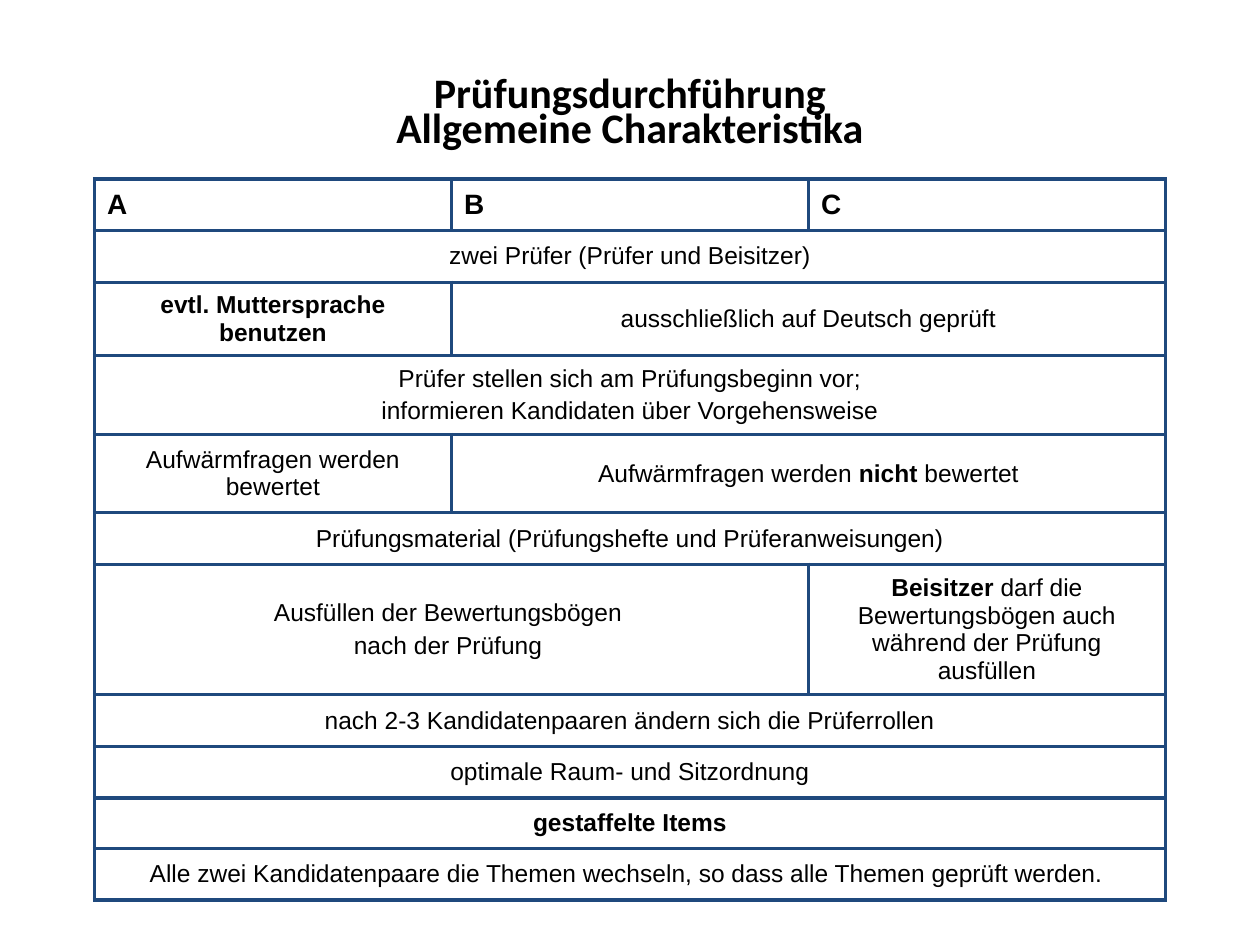
from dataclasses import dataclass

import pptx
import pptx.dml.color
import pptx.enum.text
import pptx.oxml
import pptx.oxml.ns
import pptx.util

EMU_PER_PX = 9144  # 100 px to the inch
ALIGN = pptx.enum.text.PP_ALIGN
MIDDLE = pptx.enum.text.MSO_ANCHOR.MIDDLE


@dataclass(frozen=True)
class Theme:
    text: str = "000000"
    border: str = "1F497D"
    title_font: str = "Calibri"
    body_font: str = "Arial"
    title_size: int = 24
    header_size: int = 16
    body_size: int = 14
    border_width: float = 2.25


@dataclass(frozen=True)
class Span:
    text: str
    bold: bool = False


@dataclass(frozen=True)
class Cell:
    """One cell: paragraphs of spans, reaching over one or more columns."""
    paragraphs: tuple[tuple[Span, ...], ...]
    columns: int = 1
    header: bool = False


@dataclass(frozen=True)
class Row:
    height: int
    cells: tuple[Cell, ...]


THEME = Theme()


def px(length: int) -> pptx.util.Emu:
    return pptx.util.Emu(length * EMU_PER_PX)


def plain(*lines: str, columns: int = 1, bold: bool = False, header: bool = False) -> Cell:
    """Describe a cell whose lines each have a single format."""
    return Cell(tuple((Span(line, bold),) for line in lines), columns, header)


def mixed(*spans: Span, columns: int = 1) -> Cell:
    """Describe a one-paragraph cell with bold and regular spans."""
    return Cell((spans,), columns)


TITLE = ("Prüfungsdurchführung", "Allgemeine Charakteristika")
ROWS = (
    Row(41, tuple(plain(level, bold=True, header=True) for level in "ABC")),
    Row(41, (plain("zwei Prüfer (Prüfer und Beisitzer)", columns=3),)),
    Row(58, (plain("evtl. Muttersprache benutzen", bold=True),
             plain("ausschließlich auf Deutsch geprüft", columns=2))),
    Row(63, (plain("Prüfer stellen sich am Prüfungsbeginn vor;",
                   "informieren Kandidaten über Vorgehensweise", columns=3),)),
    Row(62, (plain("Aufwärmfragen werden bewertet"),
             mixed(Span("Aufwärmfragen werden "), Span("nicht", True),
                   Span(" bewertet"), columns=2))),
    Row(41, (plain("Prüfungsmaterial (Prüfungshefte und Prüferanweisungen)", columns=3),)),
    Row(86, (plain("Ausfüllen der Bewertungsbögen ", "nach der Prüfung ", columns=2),
             mixed(Span("Beisitzer", True),
                   Span(" darf die Bewertungsbögen auch während der Prüfung ausfüllen")))),
    Row(41, (plain("nach 2-3 Kandidatenpaaren ändern sich die Prüferrollen", columns=3),)),
    Row(41, (plain("optimale Raum- und Sitzordnung", columns=3),)),
    Row(40, (plain("gestaffelte Items", columns=3, bold=True),)),
    Row(41, (plain("Alle zwei Kandidatenpaare die Themen wechseln, "
                   "so dass alle Themen geprüft werden. ", columns=3),)),
)


def write(para, text: str, *, font: str, size: int, bold: bool = False) -> None:
    span = para.add_run()
    span.text = text
    span.font.name = font
    span.font.size = pptx.util.Pt(size)
    span.font.bold = bold
    span.font.color.rgb = pptx.dml.color.RGBColor.from_string(THEME.text)


def draw_title(page) -> None:
    box = page.shapes.add_textbox(px(50), px(52), px(900), px(79))
    frame = box.text_frame
    frame.word_wrap = True
    frame.vertical_anchor = MIDDLE
    para = frame.paragraphs[0]
    para.alignment = ALIGN.CENTER
    para.line_spacing = 0.7
    for index, line in enumerate(TITLE):
        if index:
            para.add_line_break()
        write(para, line, font=THEME.title_font, size=THEME.title_size, bold=True)


def draw_borders(cell) -> None:
    properties = cell._tc.get_or_add_tcPr()
    width = pptx.util.Pt(THEME.border_width)
    for index, side in enumerate(("lnL", "lnR", "lnT", "lnB")):
        line = pptx.oxml.parse_xml(
            f'<a:{side} {pptx.oxml.ns.nsdecls("a")} w="{width}"><a:solidFill>'
            f'<a:srgbClr val="{THEME.border}"/></a:solidFill></a:{side}>')
        properties.insert(index, line)


def fill_cell(target, cell: Cell) -> None:
    size = THEME.header_size if cell.header else THEME.body_size
    target.vertical_anchor = MIDDLE
    frame = target.text_frame
    for index, spans in enumerate(cell.paragraphs):
        para = frame.add_paragraph() if index else frame.paragraphs[0]
        para.alignment = ALIGN.LEFT if cell.header else ALIGN.CENTER
        para.space_before = pptx.util.Pt(0.2 * size)
        for span in spans:
            write(para, span.text, font=THEME.body_font, size=size, bold=span.bold)


def draw_table(page, rows: tuple[Row, ...]) -> None:
    height = sum(row.height for row in rows)
    table = page.shapes.add_table(len(rows), 3, px(75), px(142), px(850), px(height)).table
    table.first_row = False
    table.horz_banding = False
    for cell in table.iter_cells():
        cell.fill.background()
        draw_borders(cell)
    for row_index, row in enumerate(rows):
        table.rows[row_index].height = px(row.height)
        column = 0
        for cell in row.cells:
            target = table.cell(row_index, column)
            if cell.columns > 1:
                target.merge(table.cell(row_index, column + cell.columns - 1))
            fill_cell(target, cell)
            column += cell.columns


def main() -> None:
    deck = pptx.Presentation()
    deck.slide_width, deck.slide_height = px(1000), px(750)
    page = deck.slides.add_slide(deck.slide_layouts[6])
    draw_title(page)
    draw_table(page, ROWS)
    deck.save("out.pptx")


if __name__ == "__main__":
    main()
